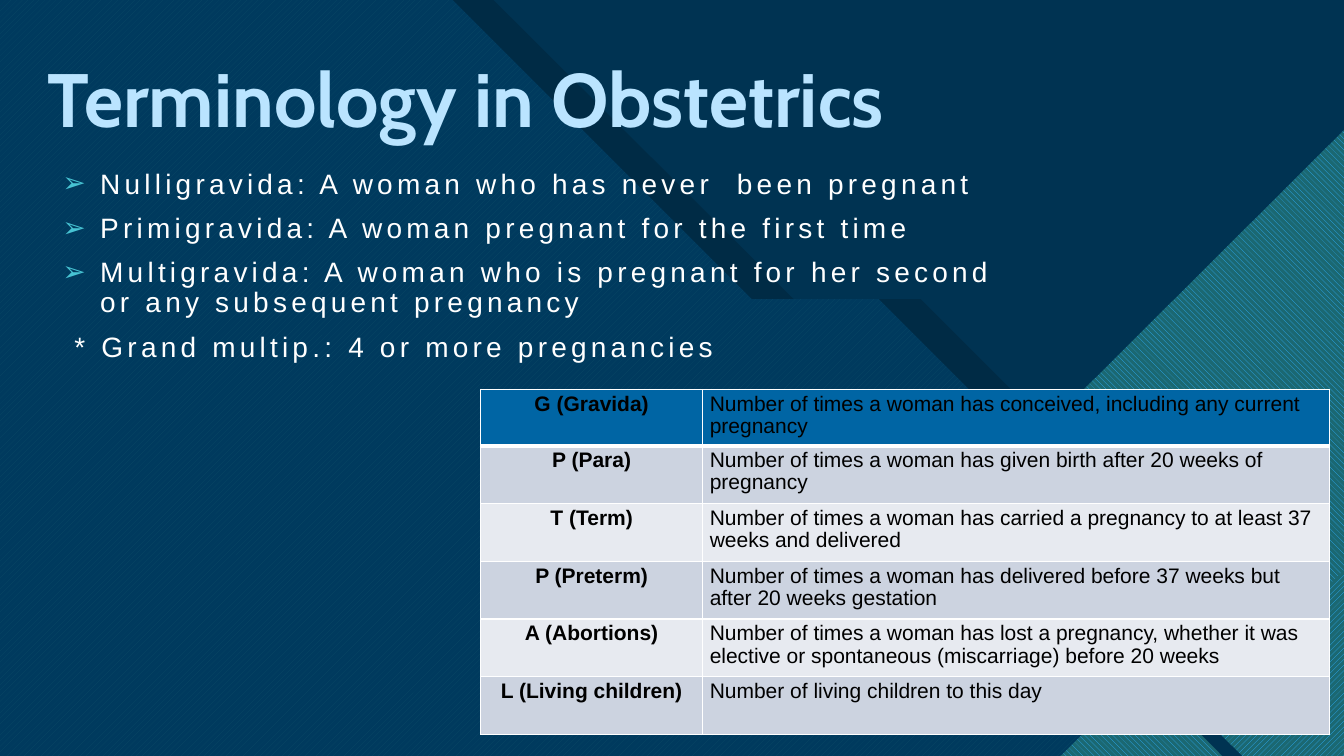
from dataclasses import dataclass

from lxml.etree import SubElement
from pptx import Presentation
from pptx.dml.color import RGBColor
from pptx.enum.dml import MSO_PATTERN
from pptx.enum.text import MSO_ANCHOR, PP_ALIGN
from pptx.oxml.ns import qn
from pptx.util import Pt

SCALE = 9525
NAVY = "003352"
TEAL = "47C3D3"
SKY = "2FAFFF"
PINE = "1B6872"
BLUE = "0065A4"
WHITE = "FFFFFF"
BLACK = "000000"
STRIPES = ("E7EAF0", "CCD3E0")


@dataclass(frozen=True)
class Panel:
    points: tuple[tuple[int, int], ...]
    colour: str
    behind: str = ""
    pattern: MSO_PATTERN | None = None
    opacity: int = 100


@dataclass(frozen=True)
class Term:
    label: str
    meaning: str


UPWARD = MSO_PATTERN.WIDE_UPWARD_DIAGONAL
DOWNWARD = MSO_PATTERN.WIDE_DOWNWARD_DIAGONAL

PANELS = (
    Panel(((40, 0), (470, 0), (756, 285), (877, 285), (1280, 688), (1280, 720), (40, 720)), BLACK),
    Panel(((0, 0), (431, 0), (716, 285), (837, 285), (1272, 720), (0, 720)), TEAL, BLUE, UPWARD),
    Panel(((0, 0), (667, 0), (952, 285), (1073, 285), (1280, 492), (1280, 720), (0, 720)),
          NAVY, opacity=85),
    Panel(((1280, 149), (1280, 680), (1171, 680), (960, 468)), NAVY),
    Panel(((1280, 124), (1280, 708), (1253, 708), (974, 429)), SKY, PINE, DOWNWARD),
    Panel(((1280, 543), (1280, 720), (1103, 720)), SKY, PINE, UPWARD),
    Panel(((1183, 720), (1104, 642), (1026, 720)), NAVY),
    Panel(((1010, 720), (1088, 643), (1164, 720)), SKY, PINE, DOWNWARD),
)

DEFINITIONS = (
    "Nulligravida: A woman who has never  been pregnant",
    "Primigravida: A woman pregnant for the first time",
    "Multigravida: A woman who is pregnant for her second or any subsequent pregnancy",
)

TERMS = (
    Term("G (Gravida)", "Number of times a woman has conceived, including any current pregnancy"),
    Term("P (Para)", "Number of times a woman has given birth after 20 weeks of pregnancy"),
    Term("T (Term)",
         "Number of times a woman has carried a pregnancy to at least 37 weeks and delivered"),
    Term("P (Preterm)",
         "Number of times a woman has delivered before 37 weeks but after 20 weeks gestation"),
    Term("A (Abortions)", "Number of times a woman has lost a pregnancy, whether it was "
         "elective or spontaneous (miscarriage) before 20 weeks"),
    Term("L (Living children)", "Number of living children to this day"),
)


def px(length: int) -> int:
    return length * SCALE


def rgb(colour: str) -> RGBColor:
    return RGBColor.from_string(colour)


def draw_panel(page, panel: Panel) -> None:
    builder = page.shapes.build_freeform(*panel.points[0], scale=SCALE)
    builder.add_line_segments(panel.points[1:], close=True)
    shape = builder.convert_to_shape()
    shape.shadow.inherit = False
    shape.line.fill.background()
    if panel.pattern is not None:
        shape.fill.patterned()
        shape.fill.pattern = panel.pattern
        shape.fill.fore_color.rgb = rgb(panel.colour)
        shape.fill.back_color.rgb = rgb(panel.behind)
        return
    shape.fill.solid()
    shape.fill.fore_color.rgb = rgb(panel.colour)
    if panel.opacity < 100:
        colour = shape._element.spPr.find(qn("a:solidFill")).find(qn("a:srgbClr"))
        SubElement(colour, qn("a:alpha"), val=str(panel.opacity * 1000))


def write(para, text: str, *, size: int, colour: str, font: str = "Arial", bold: bool = False,
          align: PP_ALIGN = PP_ALIGN.LEFT, leading: float = 0.9, before: int = 0,
          tracking: int = 0, bullet: str = "", indent: int = 0) -> None:
    para.alignment = align
    para.line_spacing = leading
    para.space_before = Pt(before)
    span = para.add_run()
    span.text = text
    span.font.size = Pt(size)
    span.font.name = font
    span.font.bold = bold
    span.font.color.rgb = rgb(colour)
    if tracking:
        span._r.get_or_add_rPr().set("spc", str(tracking * 100))
    if bullet:
        settings = para._p.get_or_add_pPr()
        settings.set("marL", str(px(indent)))
        settings.set("indent", str(-px(indent)))
        tint = SubElement(settings, qn("a:buClr"))
        SubElement(tint, qn("a:srgbClr"), val=TEAL)
        SubElement(settings, qn("a:buFont"), typeface="Arial")
        SubElement(settings, qn("a:buChar"), char=bullet)


def add_box(page, left: int, top: int, width: int, height: int, anchor: MSO_ANCHOR):
    box = page.shapes.add_textbox(px(left), px(top), px(width), px(height))
    box.text_frame.word_wrap = True
    box.text_frame.vertical_anchor = anchor
    return box.text_frame


def draw_definitions(page) -> None:
    frame = add_box(page, 50, 157, 934, 220, MSO_ANCHOR.TOP)
    look = dict(size=20, colour=WHITE, before=10, tracking=3)
    para = frame.paragraphs[0]
    for text in DEFINITIONS:
        write(para, text, bullet="➢", indent=36, **look)
        para = frame.add_paragraph()
    write(para, " * Grand multip.: 4 or more pregnancies", **look)


def format_cell(cell, fill: str, top: int, bottom: int) -> None:
    cell.margin_left = cell.margin_right = px(7)
    cell.margin_top = cell.margin_bottom = px(4)
    settings = cell._tc.get_or_add_tcPr()
    for side, width in (("L", 1), ("R", 1), ("T", top), ("B", bottom)):
        edge = SubElement(settings, qn(f"a:ln{side}"), w=str(Pt(width)))
        SubElement(SubElement(edge, qn("a:solidFill")), qn("a:srgbClr"), val=WHITE)
    cell.fill.solid()
    cell.fill.fore_color.rgb = rgb(fill)


def draw_terms(page) -> None:
    widths = (211, 597)
    heights = (51,) + (55,) * (len(TERMS) - 1)
    table = page.shapes.add_table(len(TERMS), len(widths), px(458), px(371),
                                  px(sum(widths)), px(sum(heights))).table
    table.first_row = table.horz_banding = False
    for column, width in zip(table.columns, widths):
        column.width = px(width)
    for index, (term, height) in enumerate(zip(TERMS, heights)):
        table.rows[index].height = px(height)
        fill = STRIPES[index % 2] if index else BLUE
        label, meaning = table.cell(index, 0), table.cell(index, 1)
        for cell in (label, meaning):
            format_cell(cell, fill, 3 if index == 1 else 1, 3 if index == 0 else 1)
        look = dict(size=15, colour=BLACK, leading=0.95)
        write(label.text_frame.paragraphs[0], term.label, bold=True, align=PP_ALIGN.CENTER, **look)
        write(meaning.text_frame.paragraphs[0], term.meaning, **look)


def main() -> None:
    deck = Presentation()
    deck.slide_width, deck.slide_height = px(1280), px(720)
    page = deck.slides.add_slide(deck.slide_layouts[6])
    page.background.fill.solid()
    page.background.fill.fore_color.rgb = rgb(NAVY)
    for panel in PANELS:
        draw_panel(page, panel)
    title = add_box(page, 36, 37, 1188, 105, MSO_ANCHOR.BOTTOM)
    write(title.paragraphs[0], "Terminology in Obstetrics", size=54, colour="BAE4FF",
          font="Cabin", bold=True)
    draw_definitions(page)
    draw_terms(page)
    deck.save("out.pptx")


if __name__ == "__main__":
    main()
